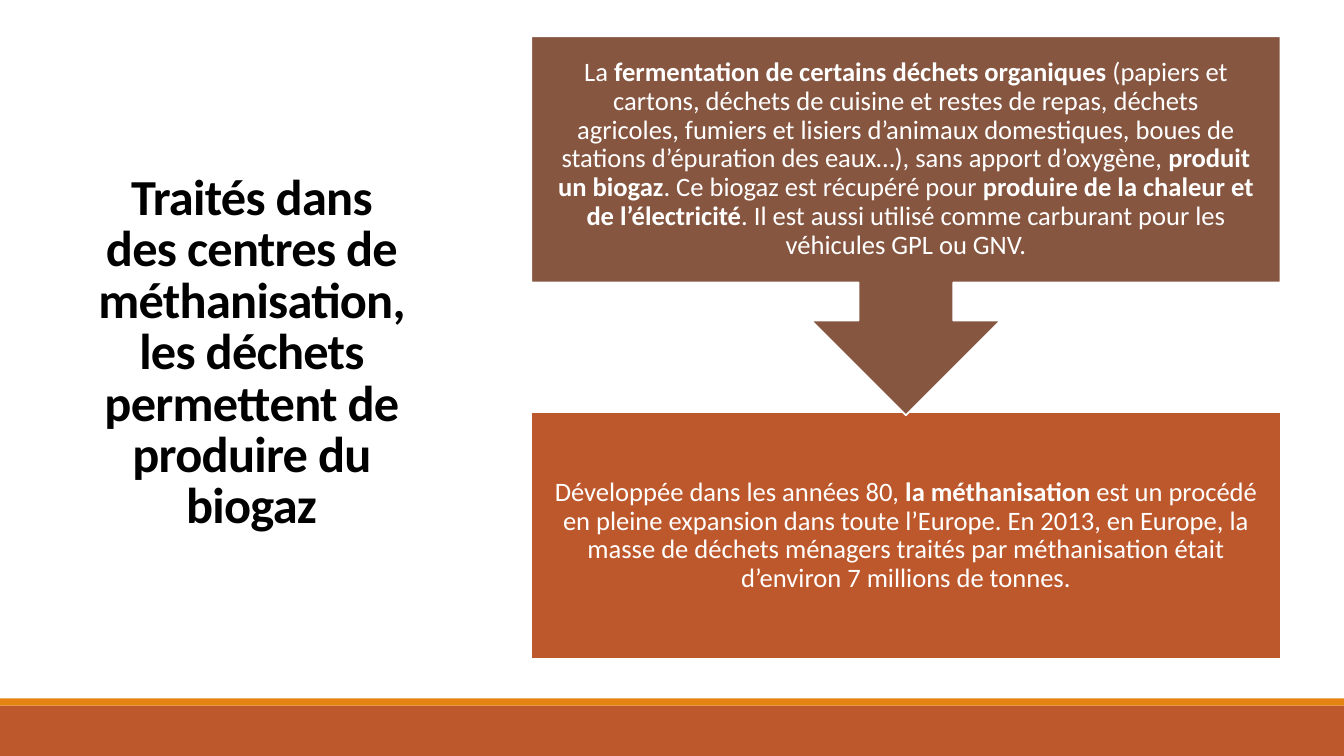
from pptx import Presentation
from pptx.dml.color import RGBColor
from pptx.enum.shapes import MSO_SHAPE as SHAPE
from pptx.enum.text import MSO_ANCHOR as ANCHOR, MSO_AUTO_SIZE as AUTO, PP_ALIGN as ALIGN
from pptx.util import Inches, Pt

WHITE = RGBColor(0xFF, 0xFF, 0xFF)
BLACK = RGBColor(0x00, 0x00, 0x00)
RUST = RGBColor(0xBD, 0x58, 0x2C)
ORANGE = RGBColor(0xE4, 0x83, 0x12)
BROWN = RGBColor(0x86, 0x56, 0x40)
FONT = "Calibri"
NBSP = chr(160)

TITLE = ("Traités dans des centres de méthanisation, les déchets "
         "permettent de produire du biogaz")
FERMENTATION = [
    (f"La{NBSP}", False),
    ("fermentation de certains déchets organiques", True),
    (f"{NBSP}(papiers et cartons, déchets de cuisine et restes de repas, déchets "
     f"agricoles,{NBSP}fumiers et lisiers d’animaux domestiques, boues de stations "
     f"d’épuration des eaux…), sans apport d’oxygène,{NBSP}", False),
    ("produit un biogaz", True),
    (f". Ce biogaz est récupéré pour{NBSP}", False),
    ("produire de la chaleur et de l’électricité", True),
    (". Il est aussi utilisé comme carburant pour les véhicules GPL ou GNV.", False),
]
EXPANSION = [
    (f"Développée dans les années{NBSP}80,{NBSP}", False),
    ("la méthanisation", True),
    (f"{NBSP}est un procédé en pleine expansion dans toute l’Europe. En 2013, en Europe, "
     "la masse de déchets ménagers traités par méthanisation était d’environ "
     f"7{NBSP}millions de tonnes.", False),
]


def add_block(slide, kind, box, color):
    """Add a filled preset shape without line or shadow."""
    s = slide.shapes.add_shape(kind, *map(Inches, box))
    s.shadow.inherit = False
    s.fill.solid()
    s.fill.fore_color.rgb = color
    s.line.fill.background()
    return s


def write(tf, runs, size, color, spacing):
    """Write one centred paragraph of (text, bold) runs."""
    tf.word_wrap = True
    tf.auto_size = AUTO.NONE
    tf.vertical_anchor = ANCHOR.MIDDLE
    p = tf.paragraphs[0]
    p.alignment = ALIGN.CENTER
    p.line_spacing = spacing
    for text, bold in runs:
        r = p.add_run()
        r.text = text
        r.font.name = FONT
        r.font.size = Pt(size)
        r.font.bold = bold
        r.font.color.rgb = color


def add_footer(slide, left, top, width, height):
    """Draw the rust band with its thin orange strip on top."""
    strip = 0.07
    add_block(slide, SHAPE.RECTANGLE, (left, top + strip, width, height - strip), RUST)
    add_block(slide, SHAPE.RECTANGLE, (left, top, width, strip), ORANGE)


def add_title(slide, left, top, width, height):
    """Place and format the title placeholder."""
    s = slide.shapes.title
    s.left, s.top, s.width, s.height = map(Inches, (left, top, width, height))
    write(s.text_frame, [(TITLE, True)], 36, BLACK, 0.85)
    for r in s.text_frame.paragraphs[0].runs:
        r._r.get_or_add_rPr().set("spc", "-50")


def add_step(slide, kind, box, color, runs):
    """Add one outlined step of the process with its text."""
    s = add_block(slide, kind, box, color)
    s.line.color.rgb = WHITE
    s.line.width = Pt(1.25)
    tf = s.text_frame
    tf.margin_left = tf.margin_right = tf.margin_top = tf.margin_bottom = Inches(0.15)
    write(tf, runs, 19, WHITE, 0.9)


def add_process(slide, left, top, width, height):
    """Stack the callout above the step its arrow points to."""
    step_h, callout_h = 2.45, 3.76
    add_step(slide, SHAPE.RECTANGLE, (left, top + height - step_h, width, step_h),
             RUST, EXPANSION)
    add_step(slide, SHAPE.DOWN_ARROW_CALLOUT, (left, top, width, callout_h),
             BROWN, FERMENTATION)


def main():
    """Build and save the slide."""
    prs = Presentation()
    prs.slide_width, prs.slide_height = Inches(13.33), Inches(7.5)
    slide = prs.slides.add_slide(prs.slide_layouts[5])
    add_footer(slide, 0, 6.93, 13.33, 0.57)
    add_title(slide, 0.81, 0.36, 3.37, 6.31)
    add_process(slide, 5.27, 0.36, 7.43, 6.18)
    prs.save("out.pptx")


if __name__ == "__main__":
    main()
